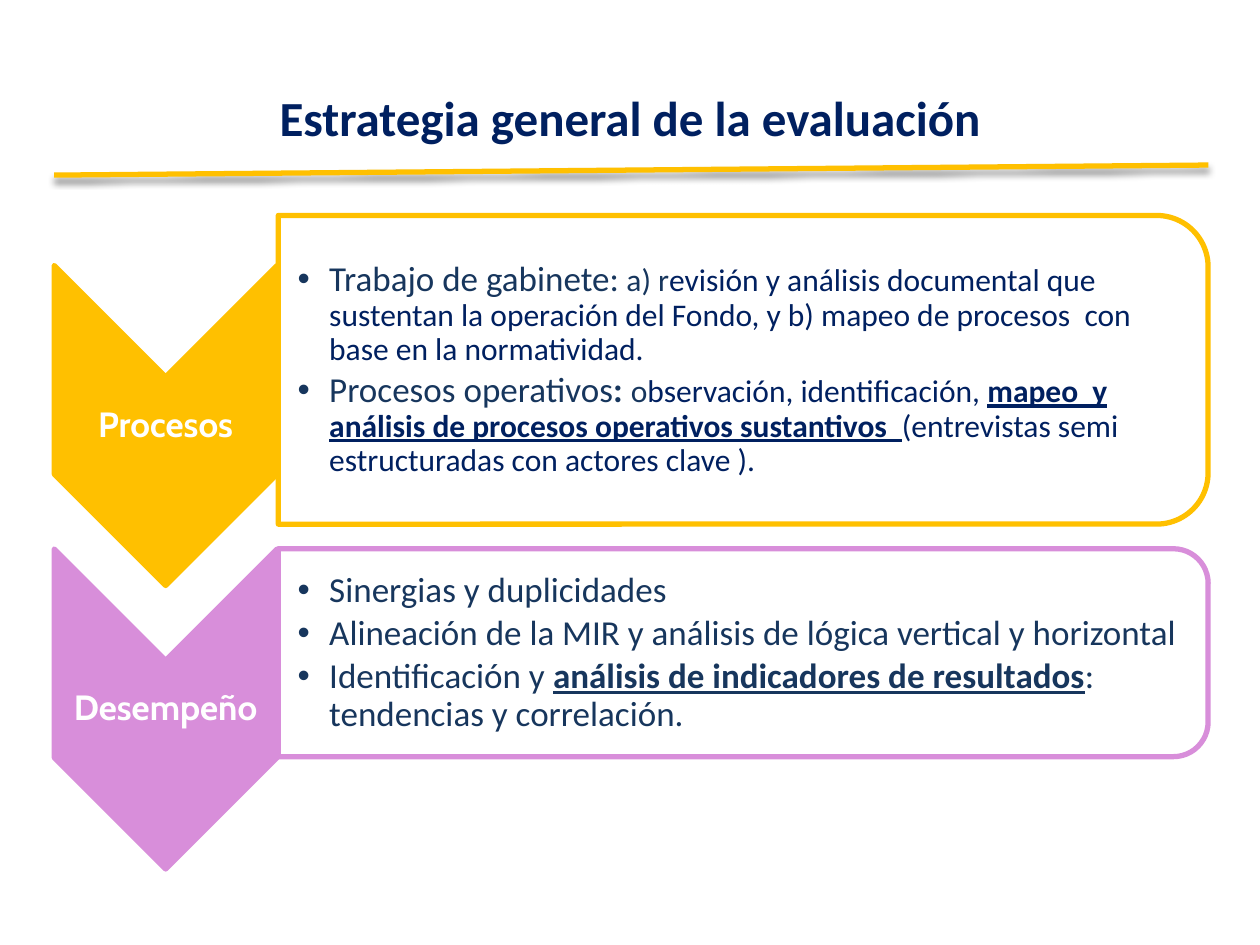
from lxml import etree
from pptx import Presentation
from pptx import util as u
from pptx.dml.color import RGBColor
from pptx.enum import shapes, text
from pptx.oxml import parse_xml
from pptx.oxml.ns import nsdecls, qn

NAVY = RGBColor(0x00, 0x20, 0x60)
SLATE = RGBColor(0x17, 0x36, 0x5D)
GOLD = RGBColor(0xFF, 0xC0, 0x00)
ORCHID = RGBColor(0xD8, 0x8E, 0xDA)
WHITE = RGBColor(0xFF, 0xFF, 0xFF)

HEADING = {"name": "Calibri", "size": u.Pt(28), "bold": True, "color": NAVY}
LABEL = {"name": "Cabin", "size": u.Pt(20), "bold": True, "color": WHITE}
LEAD = {"name": "Calibri", "size": u.Pt(20), "color": SLATE}
LEAD_BOLD = {**LEAD, "bold": True}
LEAD_KEY = {**LEAD_BOLD, "underline": True}
DETAIL_START = {**LEAD, "size": u.Pt(18)}
DETAIL = {**DETAIL_START, "color": NAVY}
DETAIL_KEY = {**DETAIL, "bold": True, "underline": True}

CHEVRON_X, CHEVRON_W, CHEVRON_H = 30.96, 127.44, 182.88
LABEL_H = 54.72
PANEL_X, PANEL_W = 158.98, 531.36

PROCESSES = [
    [("Trabajo de gabinete:", LEAD), (" a) r", DETAIL_START),
     ("evisión y análisis documental que sustentan la operación del Fondo, "
      "y b) mapeo de procesos  con base en la normatividad.", DETAIL)],
    [("Procesos operativos", LEAD), (": ", LEAD_BOLD), ("o", DETAIL_START),
     ("bservación, identificación, ", DETAIL),
     ("mapeo  y análisis de procesos operativos sustantivos  ", DETAIL_KEY),
     ("(entrevistas semi estructuradas con actores clave ).", DETAIL)],
]
PERFORMANCE = [
    [("Sinergias y duplicidades", LEAD)],
    [("Alineación de la MIR y análisis de lógica vertical y horizontal", LEAD)],
    [("Identificación y ", LEAD),
     ("análisis de indicadores de resultados", LEAD_KEY),
     (": tendencias y correlación.", LEAD)],
]
STAGES = [
    {"label": "Procesos", "color": GOLD, "chevron_top": 151.7, "label_top": 216,
     "panel_top": 123.12, "panel_h": 176.4, "text_top": 131.76,
     "text_w": 522.72, "text_h": 159.12, "points": PROCESSES},
    {"label": "Desempeño", "color": ORCHID, "chevron_top": 313.7, "label_top": 378,
     "panel_top": 313.56, "panel_h": 118.8, "text_top": 319.68,
     "text_w": 525.6, "text_h": 107.28, "points": PERFORMANCE},
]


class Builder:
    line_width = u.Pt(3)

    def __init__(self, slide):
        self.slide = slide

    def turned_shape(self, kind, left, top, width, height, fill, line, opacity=100):
        middle_x, middle_y = left + width / 2, top + height / 2
        shape = self.slide.shapes.add_shape(
            kind, u.Pt(middle_x - height / 2), u.Pt(middle_y - width / 2),
            u.Pt(height), u.Pt(width))
        shape.rotation = 90
        shape.shadow.inherit = False
        shape.fill.solid()
        shape.fill.fore_color.rgb = fill
        shape.line.color.rgb = line
        shape.line.width = self.line_width
        if opacity < 100:
            color = shape.fill._xPr.find(qn("a:solidFill"))[0]
            etree.SubElement(color, qn("a:alpha"), val=str(opacity * 1000))

    def text_box(self, left, top, width, height, paragraphs, layout, inset=0.72,
                 inset_left=0.72, bullets=False):
        box = self.slide.shapes.add_textbox(
            u.Pt(left), u.Pt(top), u.Pt(width), u.Pt(height))
        frame = box.text_frame
        frame_format = {
            "word_wrap": True, "vertical_anchor": text.MSO_ANCHOR.MIDDLE,
            "margin_left": u.Pt(inset_left), "margin_right": u.Pt(inset),
            "margin_top": u.Pt(inset), "margin_bottom": u.Pt(inset)}
        for key, value in frame_format.items():
            setattr(frame, key, value)
        for index, runs in enumerate(paragraphs):
            paragraph = frame.add_paragraph() if index else frame.paragraphs[0]
            if bullets:
                self.bullet(paragraph)
            for key, value in layout.items():
                setattr(paragraph, key, value)
            for words, style in runs:
                self.run(paragraph, words, style)

    def bullet(self, paragraph):
        properties = paragraph._p.get_or_add_pPr()
        properties.set("marL", str(u.Pt(18)))
        properties.set("indent", str(-u.Pt(18)))
        color = etree.SubElement(properties, qn("a:buClr"))
        etree.SubElement(color, qn("a:srgbClr"), val=str(SLATE))
        etree.SubElement(properties, qn("a:buFont"), typeface="Arial")
        etree.SubElement(properties, qn("a:buChar"), char="•")

    def run(self, paragraph, words, style):
        run = paragraph.add_run()
        run.text = words
        for key, value in style.items():
            if key == "color":
                run.font.color.rgb = value
            else:
                setattr(run.font, key, value)

    def rule(self, x1, y1, x2, y2, color):
        line = self.slide.shapes.add_connector(
            shapes.MSO_CONNECTOR.STRAIGHT, u.Pt(x1), u.Pt(y1), u.Pt(x2), u.Pt(y2))
        line.line.color.rgb = color
        line.line.width = self.line_width
        line._element.spPr.append(parse_xml(
            f'<a:effectLst {nsdecls("a")}>'
            f'<a:outerShdw blurRad="{u.Pt(4)}" dist="{u.Pt(3)}" dir="5400000" rotWithShape="0">'
            '<a:srgbClr val="000000"><a:alpha val="43000"/></a:srgbClr>'
            '</a:outerShdw></a:effectLst>'))

    def stage(self, stage):
        color = stage["color"]
        self.turned_shape(shapes.MSO_SHAPE.CHEVRON, CHEVRON_X, stage["chevron_top"],
                          CHEVRON_W, CHEVRON_H, color, color)
        self.text_box(CHEVRON_X, stage["label_top"], CHEVRON_W, LABEL_H,
                      [[(stage["label"], LABEL)]],
                      {"alignment": text.PP_ALIGN.CENTER, "line_spacing": 0.9,
                       "space_after": u.Pt(7)})
        self.turned_shape(shapes.MSO_SHAPE.ROUND_2_SAME_RECTANGLE, PANEL_X,
                          stage["panel_top"], PANEL_W, stage["panel_h"],
                          WHITE, color, opacity=90)
        self.text_box(PANEL_X, stage["text_top"], stage["text_w"], stage["text_h"],
                      stage["points"],
                      {"level": 1, "line_spacing": 0.9, "space_after": u.Pt(3)},
                      inset_left=11.2, bullets=True)


def main():
    deck = Presentation()
    deck.slide_width, deck.slide_height = u.Pt(720), u.Pt(540)
    builder = Builder(deck.slides.add_slide(deck.slide_layouts[6]))
    builder.text_box(36, 21.6, 648, 90,
                     [[("Estrategia general de la evaluación", HEADING)]],
                     {"alignment": text.PP_ALIGN.CENTER}, inset=3.6, inset_left=3.6)
    builder.rule(30.96, 100.08, 690.48, 94.32, GOLD)
    for stage in STAGES:
        builder.stage(stage)
    deck.save("out.pptx")


if __name__ == "__main__":
    main()
